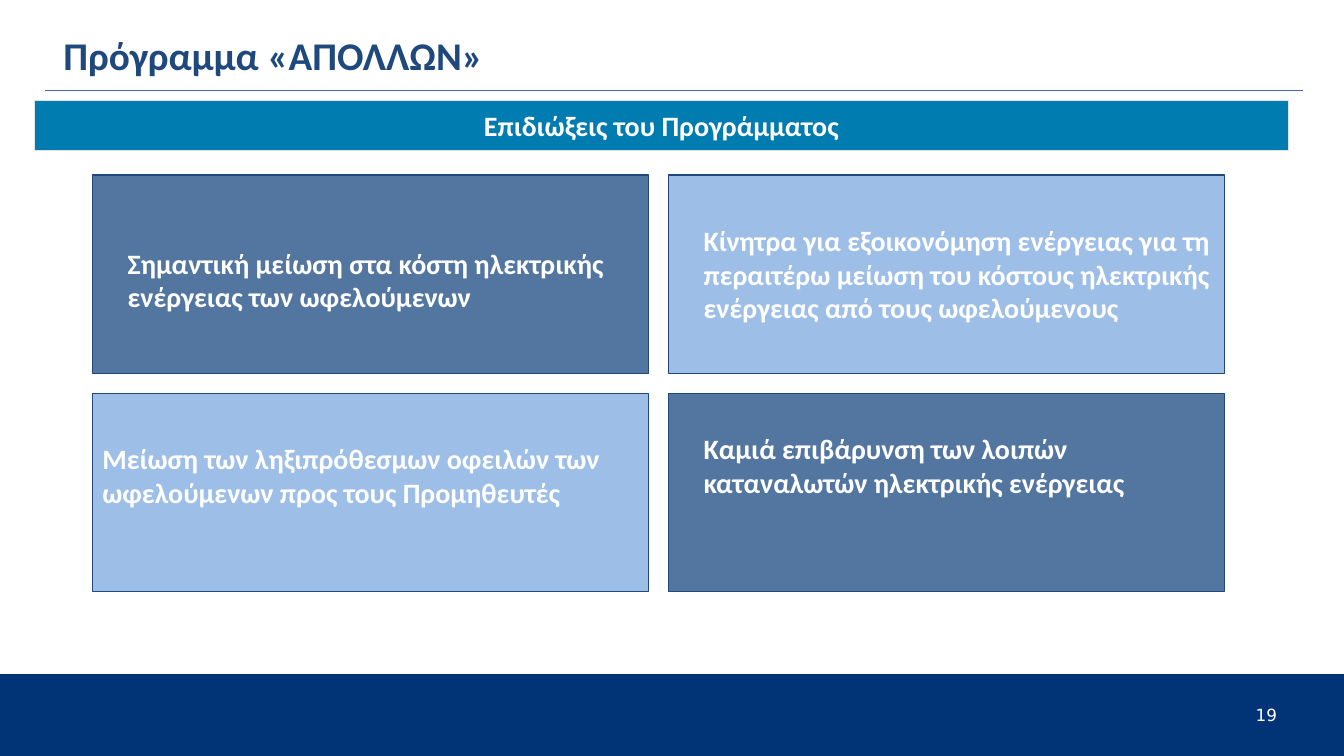
from dataclasses import dataclass

from lxml import etree
from pptx import Presentation
from pptx.dml.color import RGBColor
from pptx.enum.shapes import MSO_CONNECTOR, MSO_SHAPE
from pptx.enum.text import MSO_ANCHOR, PP_ALIGN
from pptx.oxml.ns import qn
from pptx.util import Pt

RECT = MSO_SHAPE.RECTANGLE
STRAIGHT = MSO_CONNECTOR.STRAIGHT
LEFT, CENTER = PP_ALIGN.LEFT, PP_ALIGN.CENTER
TOP, MIDDLE = MSO_ANCHOR.TOP, MSO_ANCHOR.MIDDLE


@dataclass(frozen=True)
class Theme:
    font: str = "Calibri"
    number_font: str = "DejaVu Sans"
    title_size: float = 28
    body_size: float = 20
    number_size: float = 12
    white: str = "FFFFFF"
    navy: str = "1F497D"
    footer: str = "003476"
    rule: str = "4966AC"
    banner: str = "007CB0"
    banner_line: str = "E3E3E2"
    dark_card: str = "376092"
    light_card: str = "8EB4E3"
    card_alpha: int = 86


T = Theme()
SLIDE_W, SLIDE_H = 960, 540
CARD_GAP = 14.2
INDENT = 18

# Text, left indent, vertical shift of the text from the card's middle
CARDS = [
    ("Σημαντική μείωση στα κόστη ηλεκτρικής ενέργειας των ωφελούμενων", INDENT, 4),
    ("Κίνητρα για εξοικονόμηση ενέργειας για τη περαιτέρω μείωση του κόστους "
     "ηλεκτρικής ενέργειας από τους ωφελούμενους", INDENT, 0),
    ("Μείωση των ληξιπρόθεσμων οφειλών των ωφελούμενων προς τους Προμηθευτές", 0, -12),
    ("Καμιά επιβάρυνση των λοιπών καταναλωτών ηλεκτρικής ενέργειας", INDENT, -19.5),
]


def write(s, text, size=T.body_size, color=T.white, font=T.font, bold=True,
          align=LEFT, anchor=MIDDLE, insets=(0, 0, 0, 0), spacing=None):
    """Fill a shape with one paragraph; insets are left, top, right, bottom."""
    tf = s.text_frame
    tf.word_wrap = True
    tf.vertical_anchor = anchor
    tf.margin_left, tf.margin_top, tf.margin_right, tf.margin_bottom = map(Pt, insets)
    p = tf.paragraphs[0]
    p.alignment = align
    p.line_spacing = spacing
    r = p.add_run()
    r.text = text
    r.font.name, r.font.size, r.font.bold = font, Pt(size), bold
    r.font.color.rgb = RGBColor.from_string(color)


def add_rect(sp, box, fill, line=None, alpha=None):
    s = sp.add_shape(RECT, *map(Pt, box))
    s.shadow.inherit = False
    s.fill.solid()
    s.fill.fore_color.rgb = RGBColor.from_string(fill)
    if line:
        s.line.color.rgb = RGBColor.from_string(line)
        s.line.width = Pt(0.75)
    else:
        s.line.fill.background()
    if alpha:
        color = s._element.spPr.find(qn("a:solidFill")).find(qn("a:srgbClr"))
        etree.SubElement(color, qn("a:alpha")).set("val", str(alpha * 1000))
    return s


def add_header(sp, x, y, w, h):
    """Title with a rule along the bottom of the box."""
    title = sp.add_textbox(Pt(x + 13), Pt(y), Pt(w - 13), Pt(41.8))
    write(title, "Πρόγραμμα «ΑΠΟΛΛΩΝ»", size=T.title_size, color=T.navy)
    rule = sp.add_connector(STRAIGHT, Pt(x), Pt(y + h), Pt(x + w), Pt(y + h))
    rule.line.color.rgb = RGBColor.from_string(T.rule)
    rule.line.width = Pt(0.96)
    etree.SubElement(rule._element.spPr, qn("a:effectLst"))


def add_banner(sp, *box):
    s = add_rect(sp, box, T.banner, T.banner_line)
    write(s, "Επιδιώξεις του Προγράμματος", align=CENTER, insets=(7.2, 5.8, 7.2, 5.8))


def add_cards(sp, x, y, w, h):
    """Two by two grid, dark and light in a checkerboard."""
    card_w, card_h = (w - CARD_GAP) / 2, (h - CARD_GAP) / 2
    for i, (text, indent, shift) in enumerate(CARDS):
        row, col = divmod(i, 2)
        box = (x + col * (card_w + CARD_GAP), y + row * (card_h + CARD_GAP), card_w, card_h)
        fill = T.light_card if (row + col) % 2 else T.dark_card
        s = add_rect(sp, box, fill, T.navy, T.card_alpha)
        write(s, text, insets=(7.2 + indent, 3.6 + max(0, 2 * shift),
                               7.2, 3.6 + max(0, -2 * shift)))


def add_footer(sp, x, y, w, h):
    add_rect(sp, (x, y, w, h), T.footer)
    number = sp.add_textbox(Pt(x + w - 63), Pt(y + 24), Pt(30), Pt(14))
    write(number, "19", size=T.number_size, font=T.number_font, bold=False,
          anchor=TOP, spacing=0.87)


def main():
    prs = Presentation()
    prs.slide_width, prs.slide_height = Pt(SLIDE_W), Pt(SLIDE_H)
    sp = prs.slides.add_slide(prs.slide_layouts[6]).shapes
    add_footer(sp, 0, 481.5, SLIDE_W, SLIDE_H - 481.5)
    add_header(sp, 32.3, 18.2, 898.5, 46.4)
    add_cards(sp, 66, 125, 808.6, 297.5)
    add_banner(sp, 24.8, 71.6, 895.4, 35.7)
    prs.save("out.pptx")


if __name__ == "__main__":
    main()
